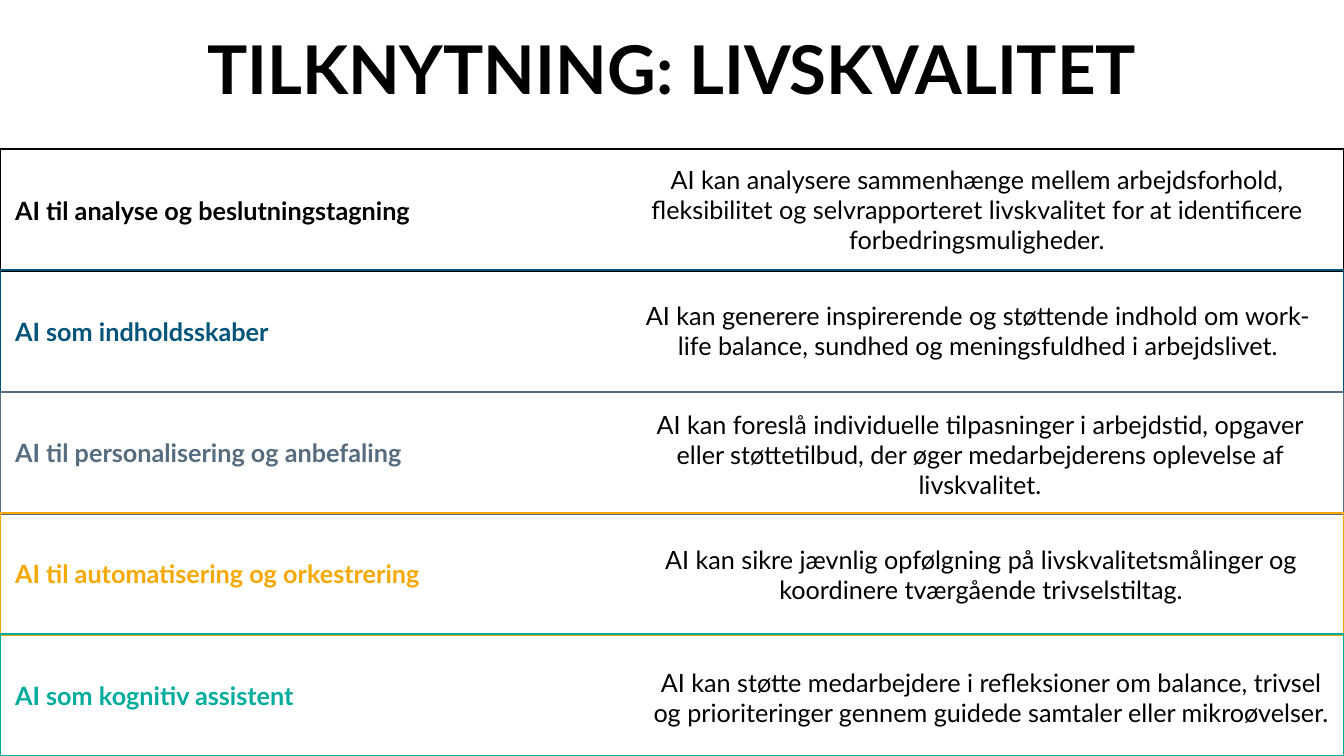
from pptx import Presentation
from pptx.dml.color import RGBColor
from pptx.enum import shapes, text
from pptx.util import Inches, Pt

BLACK = RGBColor(0x00, 0x00, 0x00)
BLUE = RGBColor(0x00, 0x54, 0x7A)
SLATE = RGBColor(0x55, 0x6D, 0x7E)
AMBER = RGBColor(0xF6, 0xA8, 0x00)
TEAL = RGBColor(0x00, 0xAC, 0x9C)

WIDTH = 13.33
ROW_TOP, ROW_STEP, ROW_HEIGHT = 1.48, 1.2025, 1.21

ROWS = [
    ("AI til analyse og beslutningstagning", BLACK, 6.19, 1.48,
     "AI kan analysere sammenhænge mellem arbejdsforhold, fleksibilitet og "
     "selvrapporteret livskvalitet for at identificere forbedringsmuligheder."),
    ("AI som indholdsskaber", BLUE, 6.2, 2.68,
     "AI kan generere inspirerende og støttende indhold om work-life balance, "
     "sundhed og meningsfuldhed i arbejdslivet."),
    ("AI til personalisering og anbefaling", SLATE, 6.22, 3.91,
     "AI kan foreslå individuelle tilpasninger i arbejdstid, opgaver eller "
     "støttetilbud, der øger medarbejderens oplevelse af livskvalitet."),
    ("AI til automatisering og orkestrering", AMBER, 6.23, 5.1,
     "AI kan sikre jævnlig opfølgning på livskvalitetsmålinger og koordinere "
     "tværgående trivselstiltag."),
    ("AI som kognitiv assistent", TEAL, 6.33, 6.32,
     "AI kan støtte medarbejdere i refleksioner om balance, trivsel og "
     "prioriteringer gennem guidede samtaler eller mikroøvelser."),
]


def write(sp, words, size, color, bold, align):
    """Fill a shape with one vertically centred paragraph."""
    tf = sp.text_frame
    tf.text = words
    tf.word_wrap = True
    tf.auto_size = text.MSO_AUTO_SIZE.NONE
    tf.vertical_anchor = text.MSO_ANCHOR.MIDDLE
    p = tf.paragraphs[0]
    p.alignment = align
    p.font.name = "Lato"
    p.font.size = Pt(size)
    p.font.bold = bold
    p.font.color.rgb = color


def set_title(s, words):
    """Place the title across the top of the slide."""
    sp = s.shapes.title
    sp.left, sp.top = Inches(0), Inches(0)
    sp.width, sp.height = Inches(WIDTH), Inches(1.34)
    write(sp, words, 48, BLACK, True, text.PP_ALIGN.CENTER)


def add_band(s, top, label, color):
    """Add a full-width outlined band with its label."""
    sp = s.shapes.add_shape(shapes.MSO_SHAPE.RECTANGLE, Inches(0), Inches(top),
                            Inches(WIDTH), Inches(ROW_HEIGHT))
    sp.shadow.inherit = False
    sp.fill.background()
    sp.line.color.rgb = color
    sp.line.width = Pt(1.5)
    write(sp, label, 18, color, True, text.PP_ALIGN.LEFT)
    sp.text_frame.margin_left = Inches(0.15)


def add_description(s, left, top, words):
    """Add the centred description of a band."""
    sp = s.shapes.add_textbox(Inches(left), Inches(top), Inches(7), Inches(1.2))
    write(sp, words, 18, BLACK, False, text.PP_ALIGN.CENTER)


def main():
    """Build and save the slide."""
    prs = Presentation()
    prs.slide_width, prs.slide_height = Inches(WIDTH), Inches(7.5)
    s = prs.slides.add_slide(prs.slide_layouts[5])
    set_title(s, "TILKNYTNING: LIVSKVALITET")
    for i, (label, color, left, top, words) in enumerate(ROWS):
        add_band(s, ROW_TOP + i * ROW_STEP, label, color)
        add_description(s, left, top, words)
    prs.save("out.pptx")


if __name__ == "__main__":
    main()
